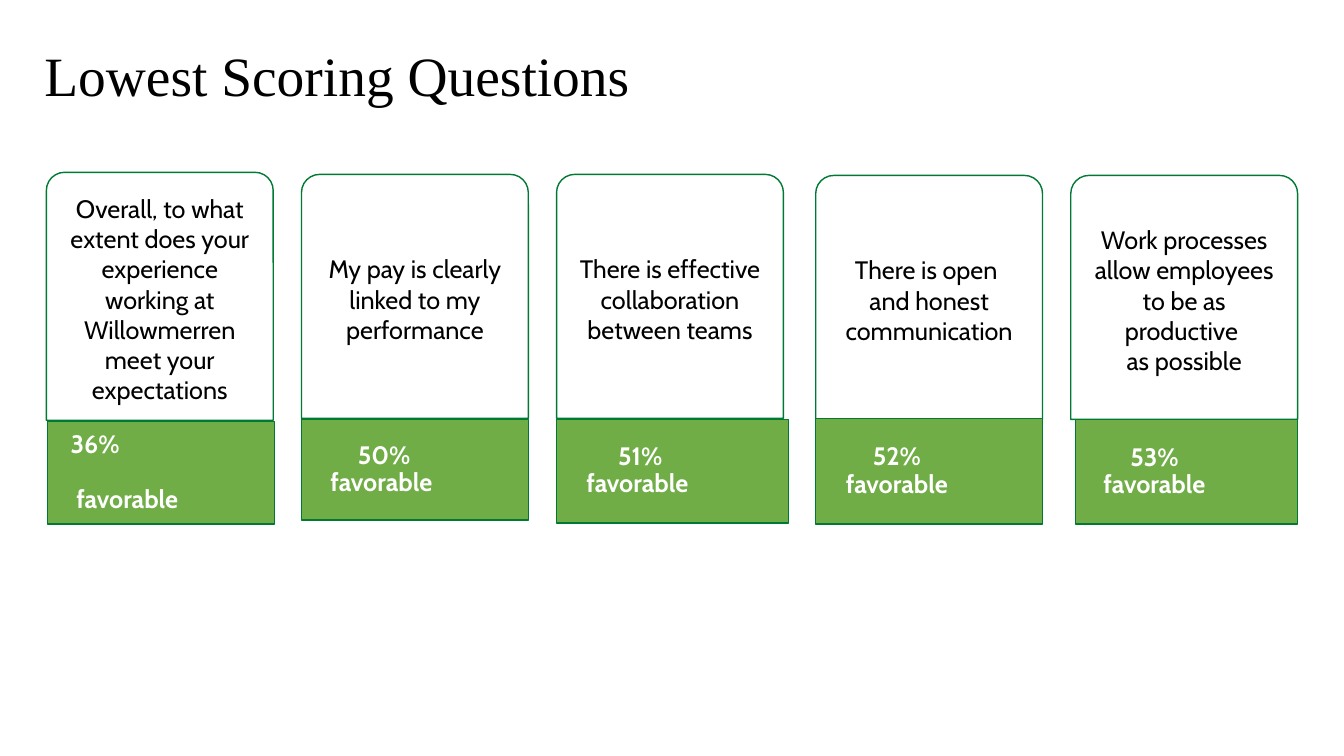
"""Build the slide of the lowest scoring survey questions."""
from dataclasses import dataclass

import pptx
import pptx.dml.color
import pptx.enum.shapes
import pptx.enum.text
import pptx.util

EMU_PER_PX = 9144
COLOURS = {"ink": "000000", "paper": "FFFFFF", "edge": "007934", "band": "70AD47"}
ALIGN = pptx.enum.text.PP_ALIGN
SHAPE = pptx.enum.shapes.MSO_SHAPE


@dataclass(frozen=True)
class Frame:
    left: int
    top: int
    width: int
    height: int


@dataclass(frozen=True)
class Question:
    wording: str
    score: str
    card: Frame
    band: Frame
    inset: int = 20


QUESTIONS = [
    Question("Overall, to what extent does your experience working at Willowmerren meet your expectations",
             "36%\nfavorable ", Frame(46, 171, 225, 246), Frame(47, 418, 225, 102), 23),
    Question("My pay is clearly linked to my performance",
             "50% favorable ", Frame(299, 173, 225, 242), Frame(299, 416, 225, 100), 23),
    Question("There is effective collaboration between teams",
             "51% favorable ", Frame(552, 173, 225, 242), Frame(552, 416, 230, 103)),
    Question("There is open \vand honest communication",
             "52% favorable", Frame(809, 174, 225, 242), Frame(809, 415, 225, 105)),
    Question("Work processes allow employees to be as productive \vas possible",
             "53% favorable", Frame(1062, 174, 225, 242), Frame(1067, 416, 220, 104)),
]


def px(length: int) -> pptx.util.Emu:
    """Turn px into EMU."""
    return pptx.util.Emu(length * EMU_PER_PX)


def colour(name: str) -> pptx.dml.color.RGBColor:
    """Look up a named colour."""
    return pptx.dml.color.RGBColor.from_string(COLOURS[name])


def write(box, text: str, font: str, size: float, ink: str, align: ALIGN,
          spacing: float = 1.0, bold: bool = False) -> None:
    """Fill a shape with formatted text, centred vertically."""
    text_frame = box.text_frame
    text_frame.text = text
    text_frame.word_wrap = True
    text_frame.auto_size = pptx.enum.text.MSO_AUTO_SIZE.NONE
    text_frame.vertical_anchor = pptx.enum.text.MSO_ANCHOR.MIDDLE
    for para in text_frame.paragraphs:
        para.alignment = align
        para.line_spacing = spacing
        for span in para.runs:
            span.font.name = font
            span.font.size = pptx.util.Pt(size)
            span.font.bold = bold
            span.font.color.rgb = colour(ink)


def add_panel(page, kind: SHAPE, frame: Frame, fill: str):
    """Add a filled shape with the green edge."""
    panel = page.shapes.add_shape(kind, px(frame.left), px(frame.top), px(frame.width), px(frame.height))
    panel.shadow.inherit = False
    panel.fill.solid()
    panel.fill.fore_color.rgb = colour(fill)
    panel.line.color.rgb = colour("edge")
    panel.line.width = pptx.util.Pt(1)
    return panel


def add_question(page, question: Question) -> None:
    """Draw a question card with its score band."""
    card = add_panel(page, SHAPE.ROUND_2_SAME_RECTANGLE, question.card, "paper")
    card.adjustments[0] = 0.08
    write(card, question.wording, "Cabin", 18, "ink", ALIGN.CENTER)
    band = add_panel(page, SHAPE.RECTANGLE, question.band, "band")
    write(band, question.score, "Cabin", 18, "paper", ALIGN.CENTER, 0.9, True)
    text_frame = band.text_frame
    text_frame.margin_left, text_frame.margin_right = px(question.inset), px(84)
    text_frame.margin_top = text_frame.margin_bottom = 0
    if len(text_frame.paragraphs) > 1:
        text_frame.paragraphs[0].alignment = ALIGN.LEFT
        text_frame.paragraphs[1].space_before = pptx.util.Pt(19.5)


def main() -> None:
    """Build and save the deck."""
    deck = pptx.Presentation()
    deck.slide_width, deck.slide_height = px(1333), px(750)
    page = deck.slides.add_slide(deck.slide_layouts[5])
    title = page.shapes.title
    title.left, title.top, title.width, title.height = px(34), px(50), px(1241), px(56)
    write(title, "Lowest Scoring Questions", "Times New Roman", 39.6, "ink", ALIGN.LEFT, 0.9)
    for question in QUESTIONS:
        add_question(page, question)
    deck.save("out.pptx")


if __name__ == "__main__":
    main()
